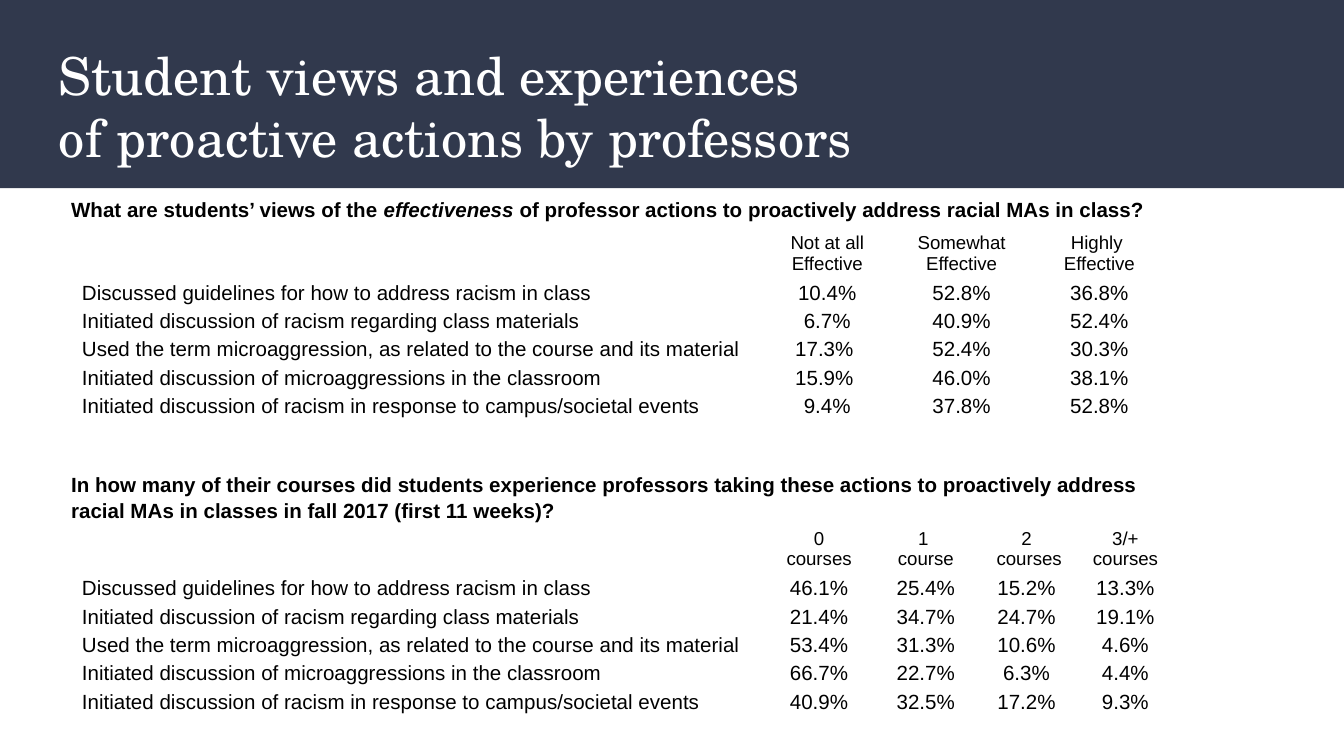
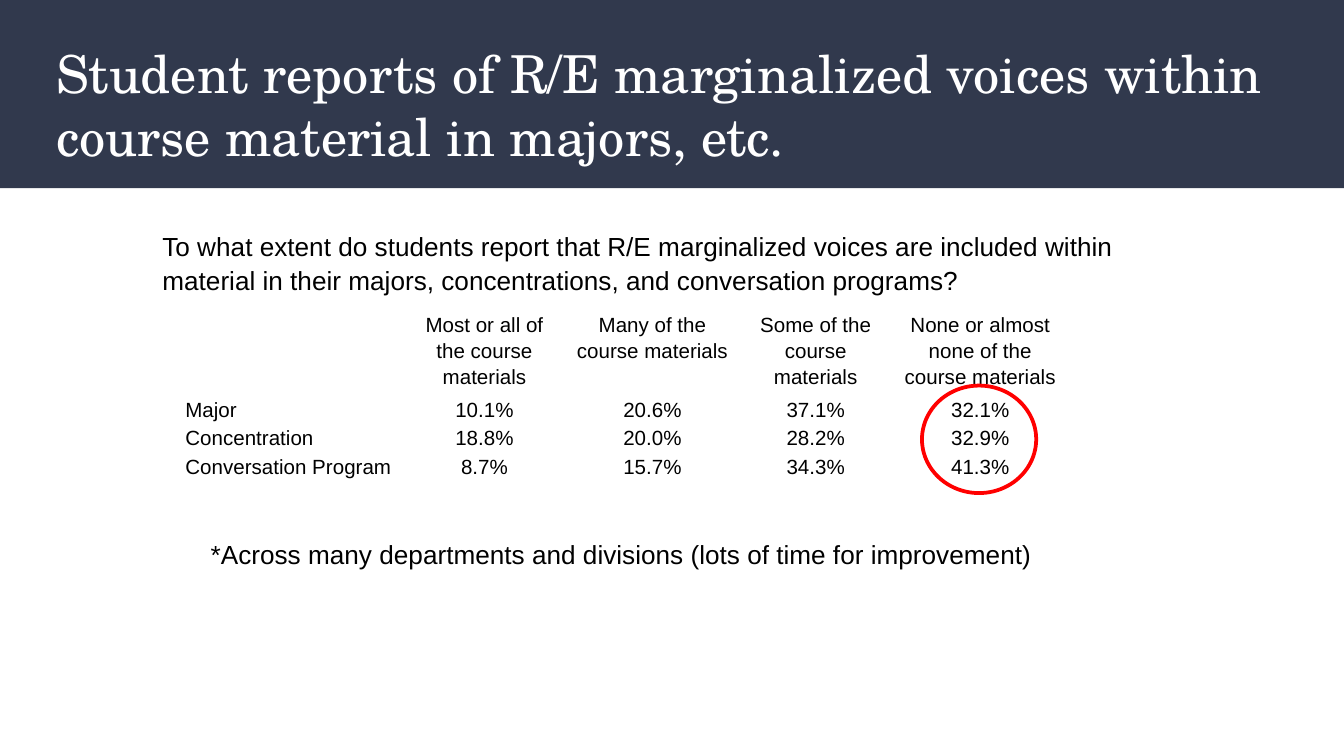
from lxml import etree
from pptx import Presentation
from pptx.dml.color import RGBColor
from pptx.enum.shapes import MSO_SHAPE
from pptx.enum.text import MSO_ANCHOR, PP_ALIGN
from pptx.oxml.ns import qn
from pptx.util import Pt

RECT, OVAL = MSO_SHAPE.RECTANGLE, MSO_SHAPE.OVAL
TOP = MSO_ANCHOR.TOP
LEFT, CENTER = PP_ALIGN.LEFT, PP_ALIGN.CENTER

NAVY, WHITE, BLACK, RED = "31394D", "FFFFFF", "000000", "FF0000"
SERIF, SANS = "TeX Gyre Schola", "Arial"
WIDTH, HEIGHT, BAND_HEIGHT = 720, 405, 100.8

ACTIONS = [
    "Discussed guidelines for how to address racism in class",
    "Initiated discussion of racism regarding class materials",
    "Used the term microaggression, as related to the course and its material",
    "Initiated discussion of microaggressions in the classroom",
    "Initiated discussion of racism in response to campus/societal events",
]
EFFECTIVENESS = [
    ["10.4%", "52.8%", "36.8%"],
    ["6.7%", "40.9%", "52.4%"],
    ["17.3% ", "52.4%", "30.3%"],
    ["15.9% ", "46.0%", "38.1%"],
    ["9.4%", "37.8%", "52.8%"],
]
COURSES = [
    ["46.1%", "25.4%", "15.2%", "13.3%"],
    ["21.4%", "34.7%", "24.7%", "19.1%"],
    ["53.4%", "31.3%", "10.6%", "4.6%"],
    ["66.7%", "22.7%", "6.3%", "4.4%"],
    ["40.9%", "32.5%", "17.2%", "9.3%"],
]
VOICES = [
    ["Major", "10.1%", "20.6%", "37.1%", "32.1%"],
    ["Concentration", "18.8%", "20.0%", "28.2%", "32.9%"],
    ["Conversation Program", "8.7%", "15.7%", "34.3%", "41.3%"],
]


def rgb(value):
    return RGBColor.from_string(value)


def apply(target, values):
    for name, value in values.items():
        setattr(target, name, value)


class Deck:
    def __init__(self):
        self.prs = Presentation()
        apply(self.prs, {"slide_width": Pt(WIDTH), "slide_height": Pt(HEIGHT)})
        self.s = None

    def slide(self, title, left, top, height):
        self.s = self.prs.slides.add_slide(self.prs.slide_layouts[6])
        self.shape(RECT, 0, 0, WIDTH, BAND_HEIGHT, fill=NAVY)
        self.text([title], left, top, 671, height, 28, font=SERIF,
                  color=WHITE, inset=(7.2, 7.2))

    def shape(self, kind, left, top, width, height, fill=None, line=None):
        sp = self.s.shapes.add_shape(kind, Pt(left), Pt(top), Pt(width), Pt(height))
        sp.shadow.inherit = False
        if fill:
            sp.fill.solid()
            sp.fill.fore_color.rgb = rgb(fill)
        else:
            sp.fill.background()
        if line:
            sp.line.color.rgb = rgb(line)
            sp.line.width = Pt(2)
        else:
            sp.line.fill.background()

    def run(self, p, text, size, font=SANS, color=BLACK, **style):
        for i, part in enumerate(text.split("\n")):
            if i:
                p.add_line_break()
            r = p.add_run()
            r.text = part
            apply(r.font, {"name": font, "size": Pt(size), **style})
            r.font.color.rgb = rgb(color)

    def text(self, paragraphs, left, top, width, height, size, wrap=True,
             inset=(7.2, 3.6), spacing=None, **style):
        sp = self.s.shapes.add_textbox(Pt(left), Pt(top), Pt(width), Pt(height))
        tf = sp.text_frame
        x, y = inset
        apply(tf, {"word_wrap": wrap, "vertical_anchor": TOP, "margin_left": Pt(x),
                   "margin_right": Pt(7.2), "margin_top": Pt(y), "margin_bottom": Pt(y)})
        for i, runs in enumerate(paragraphs):
            p = tf.add_paragraph() if i else tf.paragraphs[0]
            p.line_spacing = spacing
            for item in [runs] if isinstance(runs, str) else runs:
                text, extra = (item, {}) if isinstance(item, str) else item
                self.run(p, text, size, **style, **extra)

    def cell(self, cell, text, size, align, spacing, margin):
        apply(cell, {"margin_left": Pt(margin), "margin_right": Pt(margin),
                     "margin_top": 0, "margin_bottom": 0, "vertical_anchor": TOP})
        tcPr = cell._tc.get_or_add_tcPr()
        for side in ("a:lnL", "a:lnR", "a:lnT", "a:lnB"):
            etree.SubElement(etree.SubElement(tcPr, qn(side)), qn("a:noFill"))
        cell.fill.background()
        tf = cell.text_frame
        for i, line in enumerate(text.split("\n") if text else []):
            p = tf.add_paragraph() if i else tf.paragraphs[0]
            apply(p, {"alignment": align, "line_spacing": spacing})
            self.run(p, line, size)

    def table(self, rows, left, top, columns, head_height, row_height,
              head_size=10, head_spacing=None, padded=2):
        heights = [head_height] + [row_height] * (len(rows) - 1)
        frame = self.s.shapes.add_table(len(rows), len(columns), Pt(left), Pt(top),
                                        Pt(sum(columns)), Pt(sum(heights)))
        table = frame.table
        apply(table, {"first_row": False, "horz_banding": False})
        for column, width in zip(table.columns, columns):
            column.width = Pt(width)
        for i, values in enumerate(rows):
            table.rows[i].height = Pt(heights[i])
            size, spacing = (11, 1.15) if i else (head_size, head_spacing)
            for j, value in enumerate(values):
                self.cell(table.cell(i, j), value, size, CENTER if j else LEFT,
                          spacing, 5 if j < padded else 0)


def with_actions(head, values):
    return [[""] + head] + [[action] + row for action, row in zip(ACTIONS, values)]


def main():
    deck = Deck()

    deck.slide("Student views and experiences \nof proactive actions by professors",
               24.5, 15.8, 72.7)
    deck.text([["What are students’ views of the ", ("effectiveness", {"italic": True}),
                " of professor actions to proactively address racial MAs in class?"]],
              18.7, 102.2, 668, 20.9, 11, inset=(19.4, 3.6), bold=True)
    deck.table(with_actions(["Not at all Effective", "Somewhat Effective",
                             "Highly \nEffective"], EFFECTIVENESS),
               38.9, 124.6, [369.4, 69.8, 74.2, 73.4], 24.4, 15.2)
    deck.text(["In how many of their courses did students experience professors "
               "taking these actions to proactively address",
               "racial MAs in classes in fall 2017 (first 11 weeks)?"],
              31, 248.4, 625.7, 33.8, 11, spacing=1.07, bold=True)
    deck.table(with_actions(["0\ncourses", "1 \ncourse", "2\n courses", "3/+\ncourses"],
                            COURSES),
               38.9, 283, [368.6, 62.6, 51.8, 56.2, 49.7], 24.4, 15.2)

    deck.slide("Student reports of R/E marginalized voices within\n"
               "course material in majors, etc.", 23, 15.1, 49)
    deck.table([["", "Most or all of the course materials", "Many of the course materials",
                 "Some of the course materials",
                 "None or almost none of the course materials"]] + VOICES,
               94.3, 166.3, [122.4, 85.7, 94.3, 80.6, 95.8], 42.5, 14.15,
               head_size=11, head_spacing=1.15, padded=5)
    deck.text(["To what extent do students report that R/E marginalized voices "
               "are included within",
               "material in their majors, concentrations, and conversation programs?"],
              79.9, 118.8, 542.2, 41, 14, spacing=1.07)
    deck.text(["*Across many departments and divisions (lots of time for improvement)"],
              105.8, 285.1, 456.5, 41, 14, wrap=False)
    deck.shape(OVAL, 493.9, 206.6, 61.2, 57.6, line=RED)

    deck.prs.save("out.pptx")


if __name__ == "__main__":
    main()
